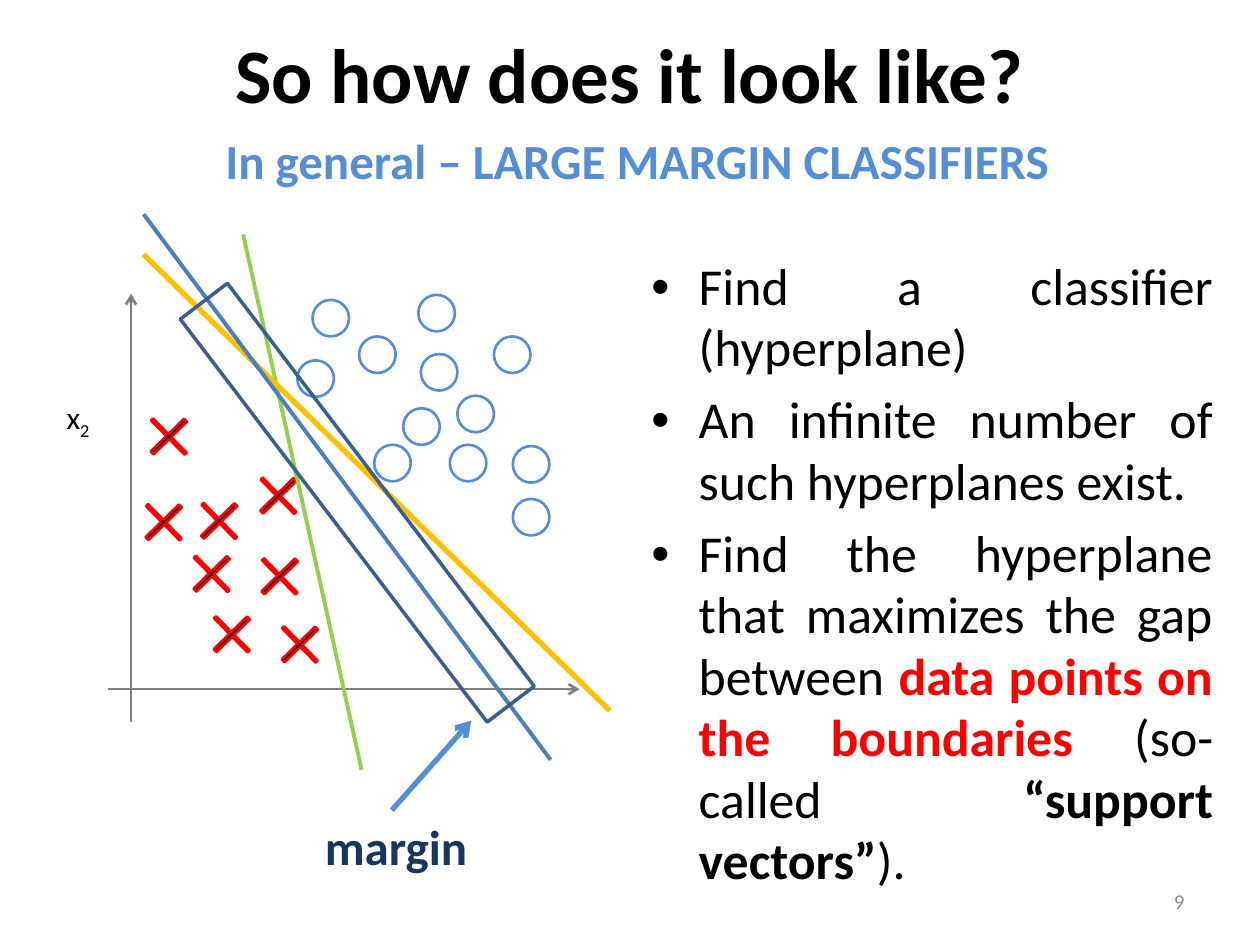
from lxml import etree
from pptx import Presentation
from pptx import util as u
from pptx.dml.color import RGBColor
from pptx.enum import shapes, text
from pptx.oxml import ns

BLACK = RGBColor(0, 0, 0)
RED = RGBColor(0xFF, 0, 0)
SKY = RGBColor(0x55, 0x8E, 0xD5)
BLUE = RGBColor(0x4B, 0x7E, 0xBC)
STEEL = RGBColor(0x3A, 0x5F, 0x8C)
NAVY = RGBColor(0x17, 0x37, 0x5E)
GREEN = RGBColor(0x92, 0xD0, 0x50)
AMBER = RGBColor(0xFF, 0xC0, 0)
AXIS_GRAY = RGBColor(0x80, 0x80, 0x80)
NUMBER_GRAY = RGBColor(0x8C, 0x8C, 0x8C)

FONT = "Calibri"
COLUMNS, ROWS = 100, 75
CELL = u.Inches(10) // COLUMNS

CIRCLE_SIZE = (2.9, 2.9)
CIRCLES = [(36.7, 22.6), (24.5, 9.7), (20.8, 6.8), (31.7, 18.3), (36.7, 18.4), (28, 15.4),
           (32.3, 14.4), (19.6, 11.6), (25.7, 18.3), (29.4, 11.1), (35.2, 9.7), (29.2, 6.4)]
CROSS_SIZE = (3.8, 3.7)
CROSSES = [(12.5, 31.5), (16.2, 20.5), (16.3, 26.9), (10.9, 26.7),
           (17.9, 32.3), (11.5, 22.5), (7.5, 15.8), (7.1, 22.6)]
AXES = [((6.4, 40.3), (6.4, 6.3)), ((4.6, 37.7), (42, 37.7))]
HYPERPLANES = [((15.3, 1.6), (24.7, 44.1), GREEN, 2.25),
               ((7.4, 3.2), (44.4, 39.4), AMBER, 3),
               ((7.4, 0), (39.7, 43.3), BLUE, 2.25)]
BULLETS = [
    [("Find a classifier (hyperplane)", BLACK, False)],
    [("An infinite number of such hyperplanes exist.", BLACK, False)],
    [("Find the hyperplane that maximizes the gap between ", BLACK, False),
     ("data points on the boundaries ", RED, True),
     ("(so-called ", BLACK, False),
     ("“support vectors”", BLACK, True),
     (").", BLACK, False)],
]


def cells(*counts):
    """Convert grid cells to lengths."""
    return [round(count * CELL) for count in counts]


def format_run(run, size, color, bold=False):
    """Apply the slide's font to a run."""
    run.font.name = FONT
    run.font.size = u.Pt(size)
    run.font.color.rgb = color
    run.font.bold = bold


def place(part, box):
    """Move a placeholder to a box of grid cells."""
    part.left, part.top, part.width, part.height = cells(*box)


def add_label(slide, box, wording, size, color, bold=False, wrap=True):
    """Add a one-line text box and return its paragraph."""
    frame = slide.shapes.add_textbox(*cells(*box)).text_frame
    frame.word_wrap = wrap
    line = frame.paragraphs[0]
    line.text = wording
    format_run(line.runs[0], size, color, bold)
    return line


def add_outline(slide, preset, box, color, width, rotation=0):
    """Add an unfilled, outlined shape."""
    outline = slide.shapes.add_shape(preset, *cells(*box))
    outline.shadow.inherit = False
    outline.fill.background()
    outline.line.color.rgb = color
    outline.line.width = u.Pt(width)
    outline.rotation = rotation
    return outline


def add_line(slide, origin, start, end, color, width, arrow=False):
    """Draw a straight line between two points measured from the origin."""
    left, top = origin
    line = slide.shapes.add_connector(
        shapes.MSO_CONNECTOR.STRAIGHT,
        *cells(left + start[0], top + start[1], left + end[0], top + end[1]))
    line.line.color.rgb = color
    line.line.width = u.Pt(width)
    if arrow:
        etree.SubElement(line.line._get_or_add_ln(), ns.qn("a:tailEnd"), type="arrow")
    etree.SubElement(line._element.spPr, ns.qn("a:effectLst"))


def add_heading(slide, box):
    """Fill the title and the subtitle beneath it."""
    left, top, width, height = box
    title = slide.shapes.title
    place(title, (left, top, width, 11.5))
    title.text_frame.text = "So how does it look like?"
    title.text_frame.vertical_anchor = text.MSO_ANCHOR.MIDDLE
    heading = title.text_frame.paragraphs[0]
    heading.alignment = text.PP_ALIGN.CENTER
    format_run(heading.runs[0], 44, BLACK, True)
    add_label(slide, (left + 16.9, top + height - 5.7, 70.9, 5.7),
              "In general – LARGE MARGIN CLASSIFIERS", 28, SKY, True)


def add_scatter(slide, origin):
    """Draw the axes and the two classes of points."""
    left, top = origin
    for x, y in CIRCLES:
        add_outline(slide, shapes.MSO_SHAPE.OVAL, (left + x, top + y, *CIRCLE_SIZE), SKY, 1.5)
    for start, end in AXES:
        add_line(slide, origin, start, end, AXIS_GRAY, 1.5, arrow=True)
    for x, y in CROSSES:
        cross = add_outline(slide, shapes.MSO_SHAPE.CROSS,
                            (left + x, top + y, *CROSS_SIZE), RED, 1.5, 45.6)
        cross.adjustments[0] = 0.47
        cross.fill.solid()
        cross.fill.fore_color.rgb = BLACK
    axis_name = add_label(slide, (left + 0.3, top + 14.1, 6.1, 6.3), "x", 18, BLACK, wrap=False)
    subscript = axis_name.add_run()
    subscript.text = "2"
    format_run(subscript, 18, BLACK)
    subscript.font._element.set("baseline", "-25000")


def add_classifiers(slide, origin):
    """Draw the candidate hyperplanes and the labelled margin."""
    left, top = origin
    for start, end, color, width in HYPERPLANES:
        add_line(slide, origin, start, end, color, width)
    add_outline(slide, shapes.MSO_SHAPE.RECTANGLE,
                (left + 22, top + 2.8, 4.7, 40.2), STEEL, 2, 142.7)
    add_line(slide, origin, (27.1, 47.3), (33.4, 40.2), SKY, 3, arrow=True)
    add_label(slide, (left + 20.8, top + 47.3, 26, 5.7), "margin", 28, NAVY, True)


def add_explanation(slide, box):
    """Fill the body with the justified bullet list."""
    body = slide.placeholders[1]
    place(body, box)
    frame = body.text_frame
    frame.auto_size = text.MSO_AUTO_SIZE.NONE
    frame.margin_top = cells(6.4)[0]
    for index, parts in enumerate(BULLETS):
        bullet = frame.add_paragraph() if index else frame.paragraphs[0]
        bullet.alignment = text.PP_ALIGN.JUSTIFY
        bullet.line_spacing = 0.99
        bullet.space_before = u.Pt(6 if index else 0)
        for wording, color, bold in parts:
            run = bullet.add_run()
            run.text = wording
            format_run(run, 29.6, color, bold)


def add_slide_number(slide, box):
    """Put the slide number at the right of its box."""
    number = add_label(slide, box, "9", 12, NUMBER_GRAY)
    number.alignment = text.PP_ALIGN.RIGHT
    slide.shapes[-1].text_frame.vertical_anchor = text.MSO_ANCHOR.MIDDLE


def main():
    """Build and save the slide."""
    deck = Presentation()
    deck.slide_width, deck.slide_height = cells(COLUMNS, ROWS)
    slide = deck.slides.add_slide(deck.slide_layouts[1])
    plot_origin = (4, 17)
    add_heading(slide, (0, 0, COLUMNS, 15.6))
    add_explanation(slide, (50.7, 13.9, 46.6, 49.5))
    add_scatter(slide, plot_origin)
    add_classifiers(slide, plot_origin)
    add_slide_number(slide, (71.7, 69.5, 23.3, 4))
    deck.save("out.pptx")


if __name__ == "__main__":
    main()
